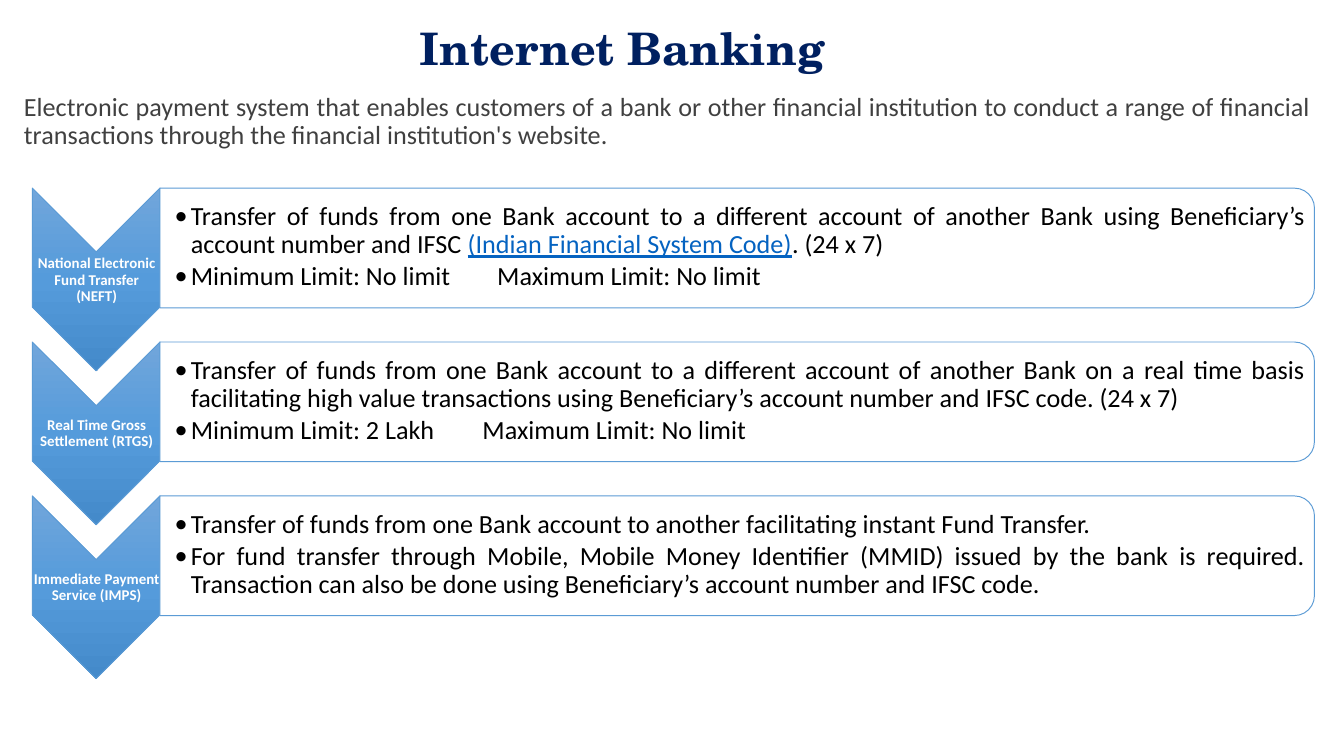
from copy import deepcopy

from lxml import etree
from pptx import Presentation
from pptx import util as u
from pptx.dml.color import RGBColor
from pptx.enum import shapes, text
from pptx.oxml import ns

JUSTIFY, CENTER = text.PP_ALIGN.JUSTIFY, text.PP_ALIGN.CENTER
TOP, MIDDLE = text.MSO_ANCHOR.TOP, text.MSO_ANCHOR.MIDDLE


def rgb(code):
    return RGBColor.from_string(code)


def sub(parent, tag, **attributes):
    return etree.SubElement(parent, ns.qn(tag), **attributes)


def write(paragraph, words, size=14, font="Calibri", color="000000",
          bold=False, underline=False):
    run = paragraph.add_run()
    run.text = words
    run.font.size = u.Pt(size)
    run.font.name = font
    run.font.color.rgb = rgb(color)
    run.font.bold = bold
    run.font.underline = underline


class BankingSlide:
    blue = "5B9BD5"
    navy = "002060"
    grey = "404040"
    link = "0563C1"
    chevron_stops = ((0, "71A6DB"), (0.5, "559BDB"), (1, "448ACA"))

    def __init__(self, deck):
        self.slide = deck.slides.add_slide(deck.slide_layouts[6])

    def box(self, left, top, width, height, anchor=MIDDLE,
            insets=(0, 0.01, 0, 0.01)):
        frame = self.slide.shapes.add_textbox(
            *map(u.Inches, (left, top, width, height))).text_frame
        frame.word_wrap = True
        frame.vertical_anchor = anchor
        (frame.margin_left, frame.margin_top,
         frame.margin_right, frame.margin_bottom) = map(u.Inches, insets)
        return frame

    def paragraph(self, frame, words, align=CENTER, **style):
        paragraph = frame.paragraphs[0]
        paragraph.alignment = align
        paragraph.line_spacing = 0.9
        write(paragraph, words, **style)

    def turned(self, kind, left, top, width, height):
        """Add a shape turned by 90 degrees that covers the given area."""
        shape = self.slide.shapes.add_shape(
            kind, u.Inches(left + (width - height) / 2),
            u.Inches(top + (height - width) / 2),
            u.Inches(height), u.Inches(width))
        shape.rotation = 90
        shape.shadow.inherit = False
        shape.line.color.rgb = rgb(self.blue)
        shape.line.width = u.Pt(0.5)
        return shape

    def chevron(self, top):
        fill = self.turned(shapes.MSO_SHAPE.CHEVRON, 0.24, top, 0.95, 1.36).fill
        fill.gradient()
        fill.gradient_angle = 0
        stop_list = fill._fill._gradFill.find(ns.qn("a:gsLst"))
        stop_list.append(deepcopy(stop_list[-1]))
        for stop, (position, color) in zip(fill.gradient_stops, self.chevron_stops):
            stop.position = position
            stop.color.rgb = rgb(color)

    def panel(self, top):
        panel = self.turned(shapes.MSO_SHAPE.ROUND_2_SAME_RECTANGLE,
                            1.19, top, 8.59, 0.89)
        panel.fill.solid()
        panel.fill.fore_color.rgb = rgb("FFFFFF")
        color = panel._element.spPr.find(ns.qn("a:solidFill"))[0]
        sub(color, "a:alpha", val="90000")

    def bullets(self, top, items, tab):
        frame = self.box(1.19, top, 8.54, 0.8, insets=(0.11, 0.01, 0.01, 0.01))
        for number, runs in enumerate(items):
            item = frame.add_paragraph() if number else frame.paragraphs[0]
            item.alignment = JUSTIFY
            item.line_spacing = 0.9
            item.space_after = u.Pt(2.1)
            properties = item._p.get_or_add_pPr()
            properties.set("marL", str(u.Inches(0.12)))
            properties.set("indent", str(-u.Inches(0.12)))
            sub(properties, "a:buFont", typeface="Calibri")
            sub(properties, "a:buChar", char="•")
            if tab:
                sub(sub(properties, "a:tabLst"), "a:tab",
                    pos=str(u.Inches(tab)), algn="l")
            for words, style in runs:
                write(item, words, **style)


def main():
    deck = Presentation()
    deck.slide_width, deck.slide_height = u.Inches(10), u.Inches(45 / 8)  # 16:9
    page = BankingSlide(deck)

    # Title and definition
    title = page.box(0.08, 0.11, 9.1, 0.54)
    page.paragraph(title, "Internet Banking", size=24, font="TeX Gyre Schola",
                   color=page.navy, bold=True)
    definition = page.box(0.08, 0.65, 9.78, 4.4, TOP, (0.1, 0.05, 0.1, 0.05))
    page.paragraph(
        definition,
        "Electronic payment system that enables customers of a bank or other "
        "financial institution to conduct a range of financial transactions "
        "through the financial institution's website.",
        align=JUSTIFY, color=page.grey)

    # Transfer services: name, bullets as (words, style) runs, tab for limits
    transfer = "Transfer of funds from one Bank account to "
    different = transfer + "a different account of another Bank "
    services = [
        ("National Electronic Fund Transfer (NEFT)", [
            [(different + "using Beneficiary’s account number and IFSC ", {}),
             ("(Indian Financial System Code)",
              {"color": page.link, "underline": True}),
             (". (24 x 7)", {})],
            [("Minimum Limit: No limit\tMaximum Limit: No limit", {})],
        ], 2.4),
        ("Real Time Gross Settlement (RTGS)", [
            [(different + "on a real time basis facilitating high value "
              "transactions using Beneficiary’s account number and IFSC code. "
              "(24 x 7)", {})],
            [("Minimum Limit: 2 Lakh\tMaximum Limit: No limit", {})],
        ], 2.29),
        ("Immediate Payment Service (IMPS)", [
            [(transfer + "another facilitating instant Fund Transfer.", {})],
            [("For fund transfer through Mobile, Mobile Money Identifier (MMID) "
              "issued by the bank is required. Transaction can also be done "
              "using Beneficiary’s account number and IFSC code.", {})],
        ], None),
    ]

    # One row per service
    first_top, last_top = 1.4, 3.69
    pitch = (last_top - first_top) / (len(services) - 1)
    for row, (name, items, tab) in enumerate(services):
        top = first_top + row * pitch
        page.chevron(top)
        label = page.box(0.24, top + 0.48, 0.96, 0.41)
        page.paragraph(label, name, size=8, color="FFFFFF", bold=True)
        page.panel(top)
        page.bullets(top + 0.04, items, tab)

    deck.save("out.pptx")


if __name__ == "__main__":
    main()
